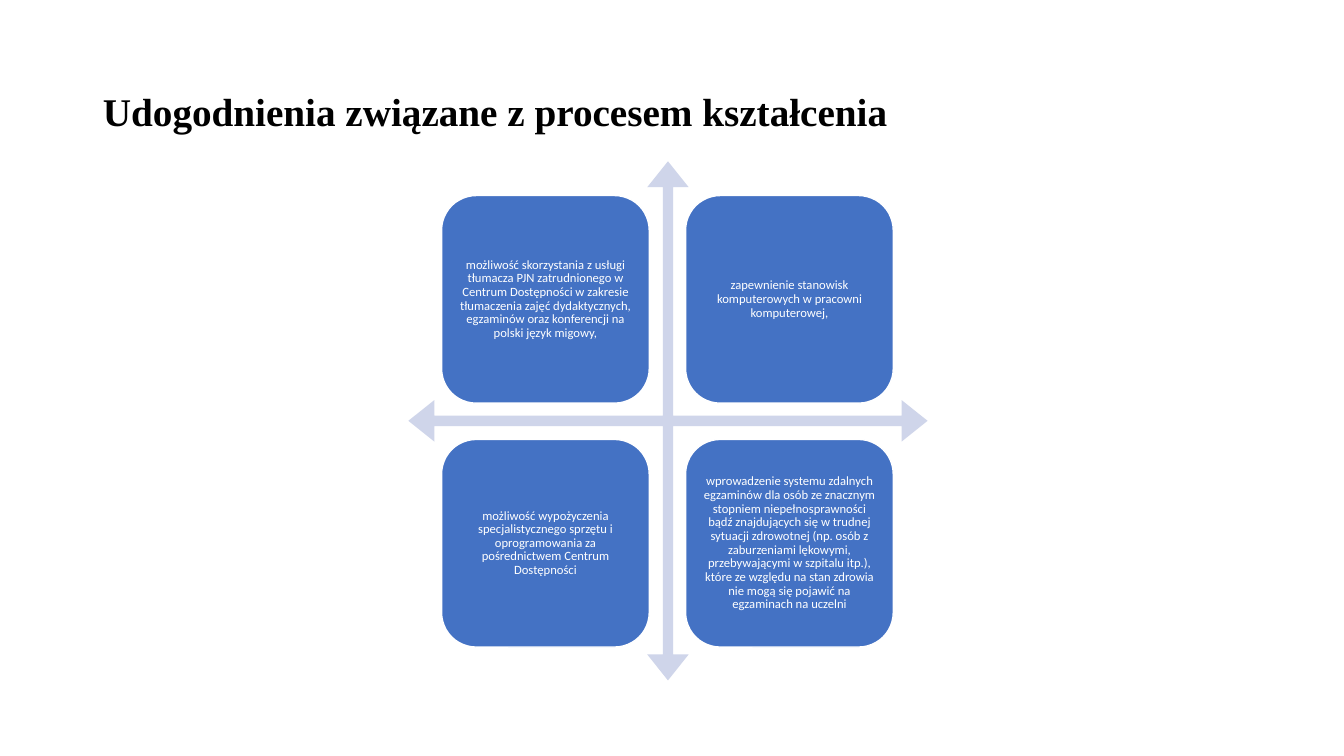
"""Build a slide on accommodations in the education process."""
from dataclasses import dataclass

from pptx import Presentation
from pptx.dml.color import RGBColor
from pptx.enum import shapes, text
from pptx.util import Inches, Pt

TITLE = "Udogodnienia związane z procesem kształcenia"
ACCOMMODATIONS = [
    [
        "możliwość skorzystania z usługi tłumacza PJN zatrudnionego w Centrum "
        "Dostępności w zakresie tłumaczenia zajęć dydaktycznych, egzaminów oraz "
        "konferencji na polski język migowy,",
        "zapewnienie stanowisk komputerowych w pracowni komputerowej,",
    ],
    [
        "możliwość wypożyczenia specjalistycznego sprzętu i oprogramowania za "
        "pośrednictwem Centrum Dostępności",
        "wprowadzenie systemu zdalnych egzaminów dla osób ze znacznym "
        "stopniem niepełnosprawności bądź znajdujących się w trudnej sytuacji "
        "zdrowotnej (np. osób z zaburzeniami lękowymi, przebywającymi w szpitalu "
        "itp.), które ze względu na stan zdrowia nie mogą się pojawić na "
        "egzaminach na uczelni",
    ],
]


@dataclass(frozen=True)
class Theme:
    """Colours, fonts and type sizes."""
    ink: str = "000000"
    paper: str = "FFFFFF"
    card: str = "4472C4"
    arrow: str = "CFD5EA"
    title_font: str = "Times New Roman"
    card_font: str = "Calibri"
    title_size: int = 28
    card_size: int = 9


THEME = Theme()
ARROW_LEFT, ARROW_TOP, ARROW_SIZE = 4.05, 1.6, 5.15
ARROW_ADJUSTMENTS = (0.02, 0.04, 0.05)
CARD_LEFT, CARD_TOP, CARD_SIZE, CARD_STEP = 4.38, 1.94, 2.06, 2.42
CARD_MARGIN = 0.04


def write(frame, words, font, size, colour, align, bold=False):
    """Fill a text frame with one styled, vertically centred paragraph."""
    frame.text = words
    frame.word_wrap = True
    frame.auto_size = text.MSO_AUTO_SIZE.NONE
    frame.vertical_anchor = text.MSO_ANCHOR.MIDDLE
    para = frame.paragraphs[0]
    para.alignment = align
    para.line_spacing = 0.9
    for span in para.runs:
        span.font.name = font
        span.font.size = Pt(size)
        span.font.bold = bold
        span.font.color.rgb = RGBColor.from_string(colour)


def add_square(page, kind, left, top, size, fill):
    """Add a flat square preset shape."""
    shape = page.shapes.add_shape(
        kind, Inches(left), Inches(top), Inches(size), Inches(size))
    shape.shadow.inherit = False
    shape.fill.solid()
    shape.fill.fore_color.rgb = RGBColor.from_string(fill)
    shape.line.fill.background()
    return shape


def add_title(page):
    """Place and style the title."""
    title = page.shapes.title
    title.left, title.top = Inches(0.92), Inches(0.4)
    title.width, title.height = Inches(11.5), Inches(1.45)
    write(title.text_frame, TITLE, THEME.title_font, THEME.title_size,
          THEME.ink, text.PP_ALIGN.LEFT, bold=True)


def add_arrows(page):
    """Add the four-way arrow behind the cards."""
    arrows = add_square(page, shapes.MSO_SHAPE.QUAD_ARROW,
                        ARROW_LEFT, ARROW_TOP, ARROW_SIZE, THEME.arrow)
    for index, value in enumerate(ARROW_ADJUSTMENTS):
        arrows.adjustments[index] = value


def add_card(page, row, column, words):
    """Add one rounded card at its place in the grid."""
    card = add_square(page, shapes.MSO_SHAPE.ROUNDED_RECTANGLE,
                      CARD_LEFT + column * CARD_STEP,
                      CARD_TOP + row * CARD_STEP, CARD_SIZE, THEME.card)
    card.line.color.rgb = RGBColor.from_string(THEME.paper)
    card.line.width = Pt(1)
    frame = card.text_frame
    frame.margin_left = frame.margin_right = Inches(CARD_MARGIN)
    frame.margin_top = frame.margin_bottom = Inches(CARD_MARGIN)
    write(frame, words, THEME.card_font, THEME.card_size,
          THEME.paper, text.PP_ALIGN.CENTER)


def main():
    """Build and save the deck."""
    deck = Presentation()
    deck.slide_width, deck.slide_height = Inches(13.33), Inches(7.5)
    page = deck.slides.add_slide(deck.slide_layouts.get_by_name("Title Only"))
    add_title(page)
    add_arrows(page)
    for row, cards in enumerate(ACCOMMODATIONS):
        for column, words in enumerate(cards):
            add_card(page, row, column, words)
    deck.save("out.pptx")


if __name__ == "__main__":
    main()
